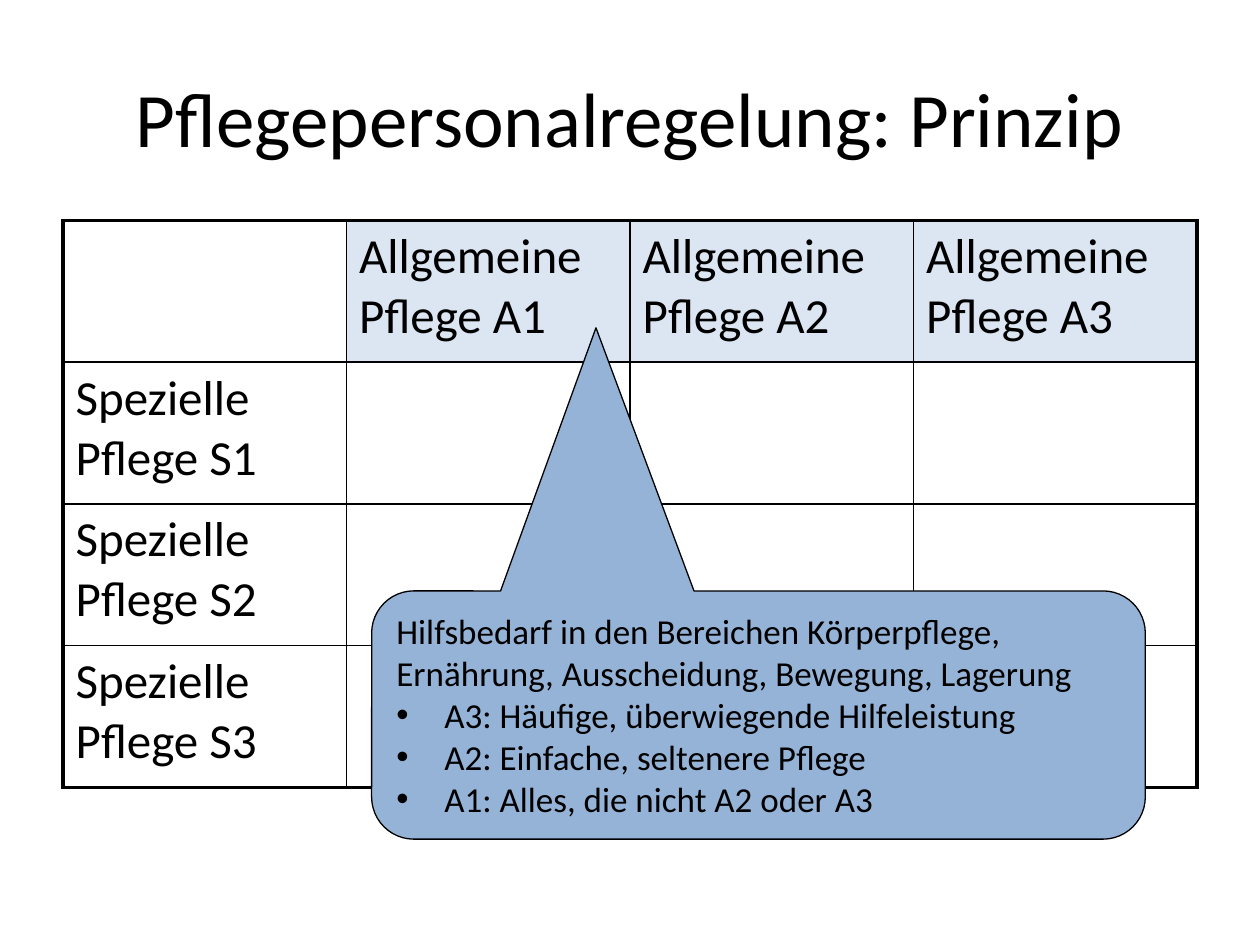
from lxml import etree
from pptx import Presentation
from pptx.dml.color import RGBColor
from pptx.enum.shapes import MSO_SHAPE
from pptx.enum.text import MSO_ANCHOR, PP_ALIGN
from pptx.oxml.ns import qn
from pptx.util import Inches, Pt

FONT = "Calibri"
BLACK = "000000"
HEADER_BLUE = "DCE6F2"
CALLOUT_BLUE = "95B3D7"
GRID_SIZE = 4
THIN, THICK = 1, 2.25


def color(value):
    """Turn a hex string into a colour."""
    return RGBColor.from_string(value)


def write_text(paragraph, text, size=20, fill=BLACK, align=PP_ALIGN.LEFT):
    """Write formatted text into a paragraph."""
    paragraph.alignment = align
    run = paragraph.add_run()
    run.text = text
    run.font.name = FONT
    run.font.size = Pt(size)
    run.font.color.rgb = color(fill)


def add_bullet(paragraph, indent):
    """Give a paragraph a round bullet with a hanging indent."""
    properties = paragraph._p.get_or_add_pPr()
    properties.set("marL", str(indent))
    properties.set("indent", str(-indent))
    etree.SubElement(properties, qn("a:buFont"), typeface="Arial")
    etree.SubElement(properties, qn("a:buChar"), char="•")


def set_borders(cell, widths):
    """Draw the left, right, top and bottom borders of a cell."""
    properties = cell._tc.get_or_add_tcPr()
    for position, (side, width) in enumerate(zip("LRTB", widths)):
        line = etree.Element(qn(f"a:ln{side}"), w=str(Pt(width)))
        fill = etree.SubElement(line, qn("a:solidFill"))
        etree.SubElement(fill, qn("a:srgbClr"), val=BLACK)
        properties.insert(position, line)


def add_title(slide, left, top, width, height):
    """Place the centred title."""
    frame = slide.shapes.add_textbox(left, top, width, height).text_frame
    frame.word_wrap = True
    frame.vertical_anchor = MSO_ANCHOR.MIDDLE
    write_text(frame.paragraphs[0], "Pflegepersonalregelung: Prinzip",
               size=44, align=PP_ALIGN.CENTER)


def add_care_table(slide, left, top, width, height):
    """Place the grid of general and special care levels."""
    table = slide.shapes.add_table(
        GRID_SIZE, GRID_SIZE, left, top, width, height).table
    table.first_row = False
    table.horz_banding = False
    last = GRID_SIZE - 1
    for row in range(GRID_SIZE):
        for column in range(GRID_SIZE):
            cell = table.cell(row, column)
            is_header = row == 0 and column > 0
            if is_header:
                cell.fill.solid()
                cell.fill.fore_color.rgb = color(HEADER_BLUE)
                label = f"Allgemeine Pflege A{column}"
            else:
                cell.fill.background()
                label = f"Spezielle Pflege S{row}"
            if is_header or (column == 0 and row > 0):
                write_text(cell.text_frame.paragraphs[0], label, size=28)
            outer_sides = (column == 0, column == last, row == 0, row == last)
            set_borders(cell, [THICK if outer else THIN for outer in outer_sides])


def add_callout(slide, left, top, width, height):
    """Place the callout that explains the general care levels."""
    shape = slide.shapes.add_shape(
        MSO_SHAPE.ROUNDED_RECTANGULAR_CALLOUT, left, top, width, height)
    for index, value in enumerate((-0.21, -1.56, 0.17)):
        shape.adjustments[index] = value
    shape.shadow.inherit = False
    shape.fill.solid()
    shape.fill.fore_color.rgb = color(CALLOUT_BLUE)
    shape.line.color.rgb = color(BLACK)
    shape.line.width = Pt(0.75)
    frame = shape.text_frame
    frame.word_wrap = True
    frame.vertical_anchor = MSO_ANCHOR.TOP
    write_text(frame.paragraphs[0], "Hilfsbedarf in den Bereichen Körperpflege, "
               "Ernährung, Ausscheidung, Bewegung, Lagerung")
    for level in ("A3: Häufige, überwiegende Hilfeleistung",
                  "A2: Einfache, seltenere Pflege",
                  "A1: Alles, die nicht A2 oder A3"):
        paragraph = frame.add_paragraph()
        write_text(paragraph, level)
        add_bullet(paragraph, Inches(0.38))


def main():
    """Build and save the presentation."""
    presentation = Presentation()
    presentation.slide_width = Inches(10)
    presentation.slide_height = Inches(7.5)
    slide = presentation.slides.add_slide(presentation.slide_layouts[6])
    add_title(slide, Inches(0.5), Inches(0.3), Inches(9), Inches(1.25))
    add_care_table(slide, Inches(0.5), Inches(1.75), Inches(9), Inches(4.5))
    add_callout(slide, Inches(2.95), Inches(4.69), Inches(6.14), Inches(1.97))
    presentation.save("out.pptx")


if __name__ == "__main__":
    main()
